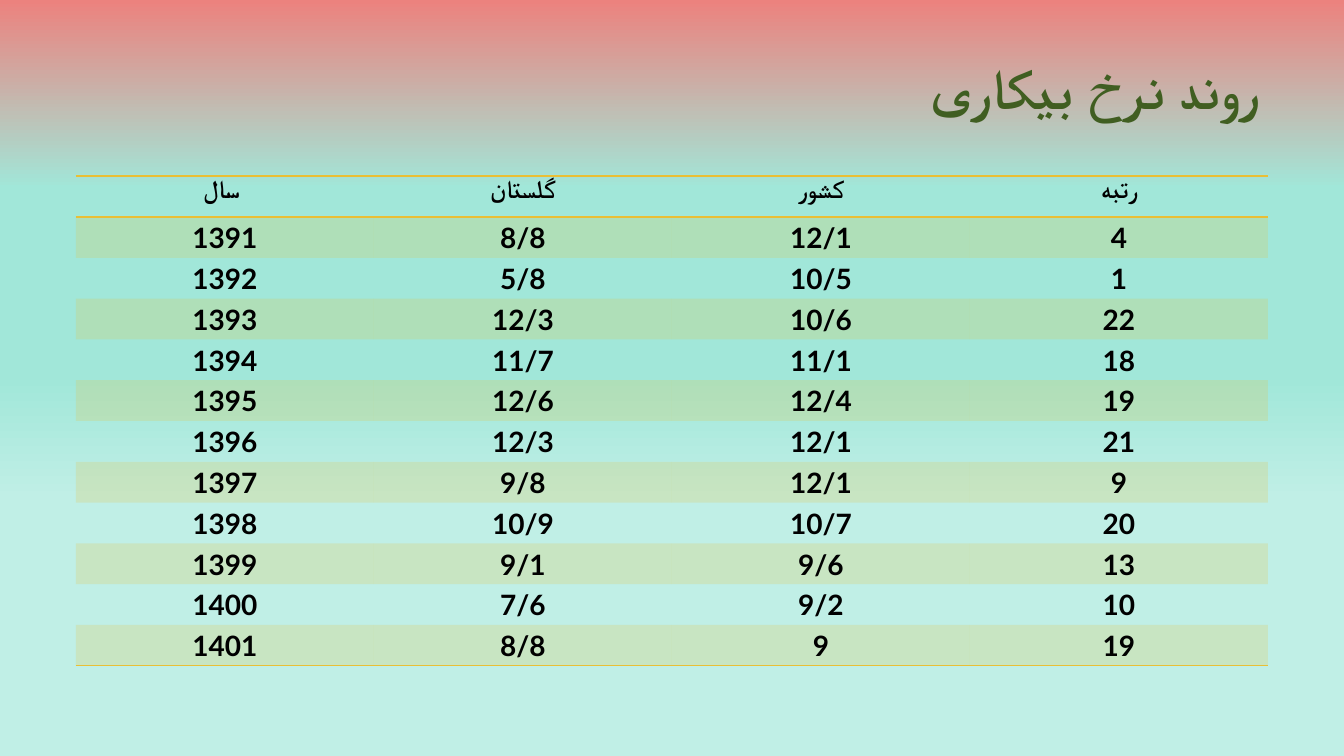
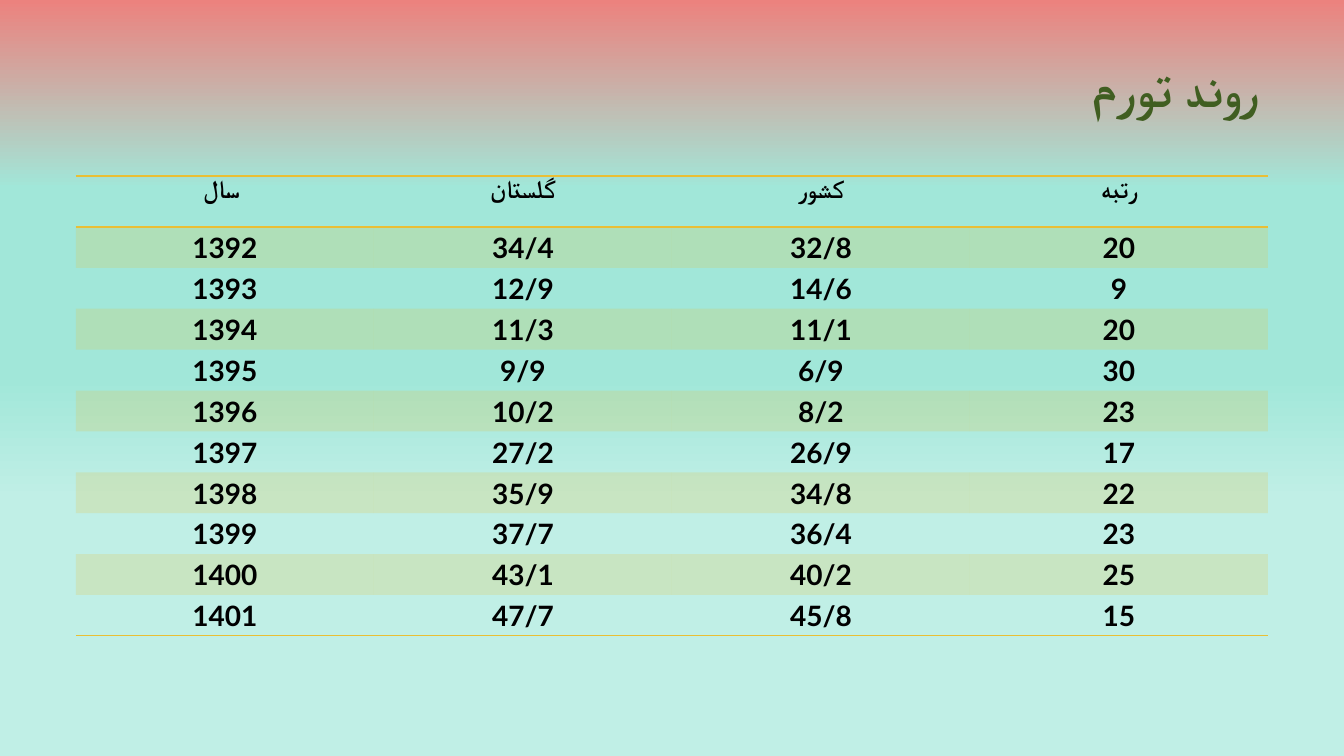
"""Build two slides that tabulate unemployment and inflation by year."""
import lxml.etree
import pptx
import pptx.dml.color
import pptx.enum.text
import pptx.oxml.ns
import pptx.util

RGB = pptx.dml.color.RGBColor
GREEN = RGB(0x40, 0x5E, 0x21)
GOLD = RGB(0xE9, 0xBF, 0x35)
BLACK = RGB(0, 0, 0)
WHITE = RGB(0xFF, 0xFF, 0xFF)
CORAL = RGB(0xEC, 0x82, 0x7E)
AQUA = RGB(0xA1, 0xE7, 0xD9)
PALE_AQUA = RGB(0xC0, 0xEF, 0xE6)

BACKGROUND_STOPS = [(0, CORAL), (25, AQUA), (50, AQUA), (66, PALE_AQUA)]
BAND_OPACITY = 20
NO_GRID_STYLE = "{2D5ABB26-0587-4C30-8999-92F81FD0307C}"
HEADINGS = ("سال ", "گلستان", "کشور", "رتبه")

SLIDES = [
    {
        "title": "روند نرخ بیکاری",
        "title_size": 40,
        "heading_height": 41,
        "table_height": 490,
        "years": [
            ("1391", "8/8", "12/1", "4"),
            ("1392", "5/8", "10/5", "1"),
            ("1393", "12/3", "10/6", "22"),
            ("1394", "11/7", "11/1", "18"),
            ("1395", "12/6", "12/4", "19"),
            ("1396", "12/3", "12/1", "21"),
            ("1397", "9/8", "12/1", "9"),
            ("1398", "10/9", "10/7", "20"),
            ("1399", "9/1", "9/6", "13"),
            ("1400", "7/6", "9/2", "10"),
            ("1401", "8/8", "9", "19"),
        ],
    },
    {
        "title": "روند تورم",
        "title_size": 37,
        "heading_height": 51,
        "table_height": 460,
        "years": [
            ("1392", "34/4", "32/8", "20"),
            ("1393", "12/9", "14/6", "9"),
            ("1394", "11/3", "11/1", "20"),
            ("1395", "9/9", "6/9", "30"),
            ("1396", "10/2", "8/2", "23"),
            ("1397", "27/2", "26/9", "17"),
            ("1398", "35/9", "34/8", "22"),
            ("1399", "37/7", "36/4", "23"),
            ("1400", "43/1", "40/2", "25"),
            ("1401", "47/7", "45/8", "15"),
        ],
    },
]

SLIDE_SIZE = (1344, 756)
TITLE_BOX = (672, 48, 597, 86)
TABLE_LEFT, TABLE_TOP, TABLE_WIDTH = 76, 176, 1192


def px(length):
    return round(length * 914400 / 100.8)


TITLE_FONT = {"name": "League Spartan", "bold": True}
HEADING_FONT = {**TITLE_FONT, "size": pptx.util.Pt(18)}
FIGURE_FONT = {"name": "Lato", "bold": True, "size": pptx.util.Pt(20)}
FIGURE_CELL = {
    "vertical_anchor": pptx.enum.text.MSO_ANCHOR.MIDDLE,
    "margin_left": px(1),
    "margin_right": px(1),
    "margin_top": px(1),
    "margin_bottom": 0,
}


def apply(target, values):
    for name, value in values.items():
        setattr(target, name, value)


def add_xml(parent, tag, **attributes):
    return lxml.etree.SubElement(parent, pptx.oxml.ns.qn(tag), attributes)


def make_line(parent, tag, color, points):
    line = add_xml(parent, tag, w=str(pptx.util.Pt(points)))
    add_xml(add_xml(line, "a:solidFill"), "a:srgbClr", val=str(color))
    return line


def write(paragraph, text, font, color, align):
    paragraph.alignment = align
    run = paragraph.add_run()
    run.text = text
    apply(run.font, font)
    run.font.color.rgb = color
    properties = run.font._element
    add_xml(properties, "a:cs", typeface=font["name"])
    return properties


def set_background(master):
    fill = master.background.fill
    fill.gradient()
    fill.gradient_angle = 270
    stops = next(master._element.iter(pptx.oxml.ns.qn("a:gsLst")))
    for stop in list(stops):
        stops.remove(stop)
    for position, color in BACKGROUND_STOPS:
        stop = add_xml(stops, "a:gs", pos=str(position * 1000))
        add_xml(stop, "a:srgbClr", val=str(color))


def add_title(slide, text, size):
    frame = slide.shapes.add_textbox(*map(px, TITLE_BOX)).text_frame
    frame.word_wrap = True
    frame.vertical_anchor = pptx.enum.text.MSO_ANCHOR.MIDDLE
    paragraph = frame.paragraphs[0]
    paragraph.line_spacing = 0.9
    font = {**TITLE_FONT, "size": pptx.util.Pt(size)}
    properties = write(paragraph, text, font, GREEN, pptx.enum.text.PP_ALIGN.RIGHT)
    properties.insert(0, make_line(properties, "a:ln", WHITE, 1.5))


def fill_band(cell):
    cell.fill.solid()
    cell.fill.fore_color.rgb = GOLD
    color = next(cell._tc.iter(pptx.oxml.ns.qn("a:solidFill")))[0]
    add_xml(color, "a:alpha", val=str(BAND_OPACITY * 1000))


def add_borders(cell, sides):
    properties = cell._tc.get_or_add_tcPr()
    for index, side in enumerate(sides):
        properties.insert(index, make_line(properties, side, GOLD, 1))


def add_figures(slide, years, heading_height, table_height):
    rows = [HEADINGS, *years]
    table = slide.shapes.add_table(
        len(rows), len(HEADINGS),
        *map(px, (TABLE_LEFT, TABLE_TOP, TABLE_WIDTH, table_height)),
    ).table
    apply(table, {"first_row": False, "horz_banding": False})
    table._tbl.tblPr.find(pptx.oxml.ns.qn("a:tableStyleId")).text = NO_GRID_STYLE
    year_height = (table_height - heading_height) / len(years)
    for row_index, values in enumerate(rows):
        is_heading = row_index == 0
        table.rows[row_index].height = px(heading_height if is_heading else year_height)
        for column_index, value in enumerate(values):
            cell = table.cell(row_index, column_index)
            if not is_heading:
                apply(cell, FIGURE_CELL)
            if row_index % 2:
                fill_band(cell)
            else:
                cell.fill.background()
            if is_heading:
                add_borders(cell, ["a:lnT", "a:lnB"])
            elif row_index == len(years):
                add_borders(cell, ["a:lnB"])
            write(cell.text_frame.paragraphs[0], value,
                  HEADING_FONT if is_heading else FIGURE_FONT,
                  BLACK, pptx.enum.text.PP_ALIGN.CENTER)


def main():
    deck = pptx.Presentation()
    deck.slide_width, deck.slide_height = map(px, SLIDE_SIZE)
    set_background(deck.slide_master)
    for content in SLIDES:
        slide = deck.slides.add_slide(deck.slide_layouts[6])
        add_title(slide, content["title"], content["title_size"])
        add_figures(slide, content["years"], content["heading_height"], content["table_height"])
    deck.save("out.pptx")


if __name__ == "__main__":
    main()
